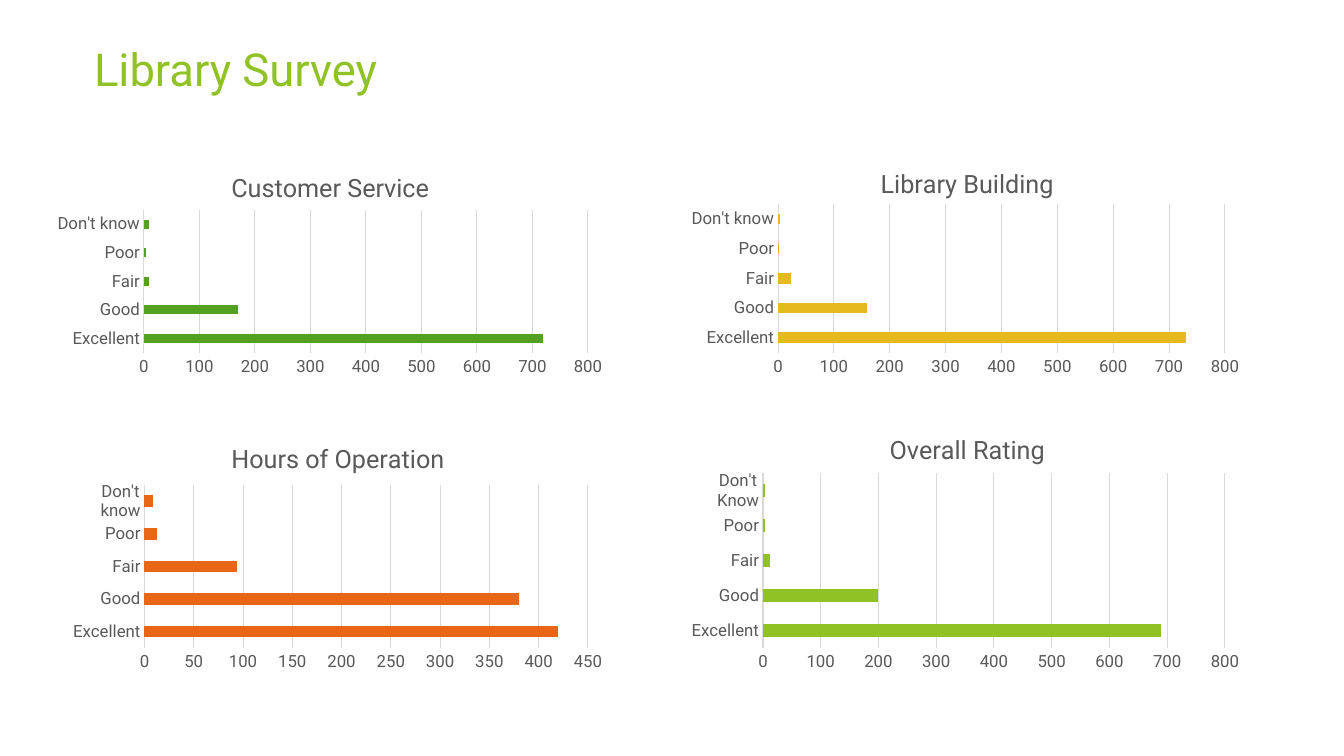
from dataclasses import dataclass

from lxml.etree import _Element as Element
from pptx import Presentation
from pptx.chart.chart import Chart
from pptx.chart.data import CategoryChartData
from pptx.dml.color import RGBColor
from pptx.enum.chart import XL_CHART_TYPE as ChartType, XL_TICK_MARK as Tick
from pptx.enum.text import MSO_ANCHOR as Anchor, PP_ALIGN as Align
from pptx.oxml import parse_xml
from pptx.oxml.ns import nsdecls, qn
from pptx.util import Inches, Pt

GREEN = RGBColor(0x54, 0xA0, 0x21)
GOLD = RGBColor(0xE6, 0xB9, 0x1E)
ORANGE = RGBColor(0xE7, 0x66, 0x18)
LIME = RGBColor(0x90, 0xC2, 0x26)
GRAY = RGBColor(0x59, 0x59, 0x59)
GRID = RGBColor(0xD9, 0xD9, 0xD9)
FONT = "Roboto"

# Grid of 160 columns by 90 rows
SLIDE_W, SLIDE_H = Inches(13.333), Inches(7.5)
COL, ROW = SLIDE_W / 160, SLIDE_H / 90


@dataclass(frozen=True)
class Box:
    """A place in grid columns and rows."""
    x: float
    y: float
    w: float
    h: float

    def emu(self) -> tuple[int, int, int, int]:
        return (int(self.x * COL), int(self.y * ROW),
                int(self.w * COL), int(self.h * ROW))

    def share_of(self, outer: "Box") -> dict[str, float]:
        return {"x": (self.x - outer.x) / outer.w,
                "y": (self.y - outer.y) / outer.h,
                "w": self.w / outer.w, "h": self.h / outer.h}


@dataclass(frozen=True)
class Survey:
    title: str
    color: RGBColor
    values: tuple[int, ...]
    box: Box
    plot: Box
    title_at: tuple[float, float]
    top: int = 800
    step: int = 100
    gap: int = 182
    unknown: str = "Don't know"


SURVEYS = [
    Survey("Customer Service", GREEN, (720, 170, 9, 3, 9),
           Box(5.52, 17.76, 67.56, 27.72), Box(17.14, 25, 52.86, 17),
           (27, 19.8), gap=219),
    Survey("Library Building", GOLD, (730, 160, 23, 1, 3),
           Box(81, 17.76, 68.04, 27.72), Box(92.62, 24.3, 53.21, 17.7),
           (104.3, 19.44)),
    Survey("Hours of Operation", ORANGE, (420, 380, 94, 13, 9),
           Box(7.44, 49.92, 65.64, 30.6), Box(17.2, 57.74, 52.8, 19.4),
           (27, 52.06), top=450, step=50),
    Survey("Overall Rating", LIME, (690, 200, 13, 3, 3),
           Box(81, 49.32, 68.04, 31.32), Box(90.83, 56.3, 55, 20.84),
           (105.36, 51.1), unknown="Don't Know"),
]


def apply(target: object, **values: object) -> None:
    for name, value in values.items():
        setattr(target, name, value)


def style_font(font: object, size: float, color: RGBColor) -> None:
    apply(font, name=FONT, size=Pt(size), bold=False)
    font.color.rgb = color


def style_line(line: object) -> None:
    line.color.rgb = GRID
    line.width = Pt(0.75)


def set_layout(parent: Element, index: int, shares: dict[str, float],
               inner: bool = False) -> None:
    """Fix the place of a chart part, as shares of the chart's size."""
    for old in parent.findall(qn("c:layout")):
        parent.remove(old)
    target = '<c:layoutTarget val="inner"/>' if inner else ""
    modes = "".join(f'<c:{k}Mode val="edge"/>' for k in "xy")
    sizes = "".join(f'<c:{k} val="{v:.4f}"/>' for k, v in shares.items())
    parent.insert(index, parse_xml(
        f'<c:layout {nsdecls("c")}><c:manualLayout>{target}{modes}{sizes}'
        "</c:manualLayout></c:layout>"))


def style_axes(chart: Chart, survey: Survey) -> None:
    cat, val = chart.category_axis, chart.value_axis
    for axis in (cat, val):
        apply(axis, major_tick_mark=Tick.NONE, minor_tick_mark=Tick.NONE)
        style_font(axis.tick_labels.font, 12, GRAY)
    cat.has_major_gridlines = False
    style_line(cat.format.line)
    apply(val, minimum_scale=0, maximum_scale=survey.top,
          major_unit=survey.step, has_major_gridlines=True)
    val.format.line.fill.background()
    style_line(val.major_gridlines.format.line)


def add_survey(shapes: object, survey: Survey) -> None:
    data = CategoryChartData()
    data.categories = ["Excellent", "Good", "Fair", "Poor", survey.unknown]
    data.add_series("Series 1", survey.values)
    chart = shapes.add_chart(
        ChartType.BAR_CLUSTERED, *survey.box.emu(), data).chart
    chart.has_legend = False
    style_font(chart.font, 10, RGBColor(0, 0, 0))

    # Chart heading
    chart.has_title = True
    title = chart.chart_title
    p = title.text_frame.paragraphs[0]
    r = p.add_run()
    r.text = survey.title
    style_font(r.font, 18, GRAY)
    title.include_in_layout = False
    place = Box(*survey.title_at, 0, 0).share_of(survey.box)
    set_layout(title._element, 1, {k: place[k] for k in "xy"})

    # Bars and axes
    plot = chart.plots[0]
    apply(plot, gap_width=survey.gap, vary_by_categories=False)
    fill = plot.series[0].format.fill
    fill.solid()
    fill.fore_color.rgb = survey.color
    style_axes(chart, survey)
    area = chart._chartSpace.find(f'.//{qn("c:plotArea")}')
    set_layout(area, 0, survey.plot.share_of(survey.box), inner=True)


def main() -> None:
    prs = Presentation()
    apply(prs, slide_width=SLIDE_W, slide_height=SLIDE_H)
    s = prs.slides.add_slide(prs.slide_layouts[5])

    # Slide title
    sp = s.shapes.title
    x, y, w, h = Box(10, 4.2, 138, 7.92).emu()
    apply(sp, left=x, top=y, width=w, height=h)
    tf = sp.text_frame
    apply(tf, vertical_anchor=Anchor.MIDDLE, word_wrap=True)
    p = tf.paragraphs[0]
    p.alignment = Align.LEFT
    r = p.add_run()
    r.text = "Library Survey"
    style_font(r.font, 32.4, LIME)

    # Four survey charts
    for survey in SURVEYS:
        add_survey(s.shapes, survey)
    prs.save("out.pptx")


if __name__ == "__main__":
    main()
